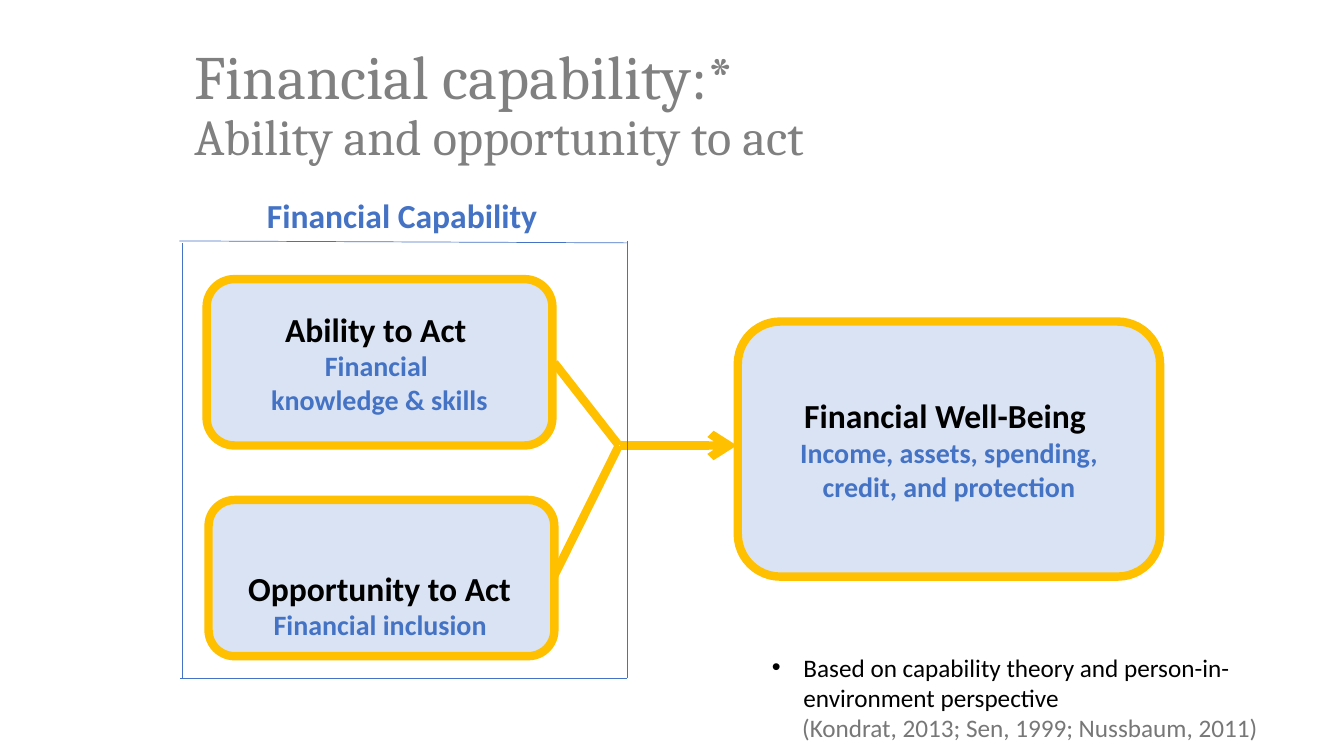
"""Build the financial capability slide."""
from lxml.etree import SubElement
from pptx import Presentation
from pptx.dml.color import RGBColor
from pptx.enum.shapes import MSO_CONNECTOR, MSO_SHAPE
from pptx.enum.text import MSO_ANCHOR, PP_ALIGN
from pptx.oxml.ns import qn
from pptx.util import Pt

GRAY = RGBColor(0x80, 0x80, 0x80)
CITE = RGBColor(0x77, 0x77, 0x77)
BLACK = RGBColor(0, 0, 0)
BLUE = RGBColor(0x44, 0x72, 0xC4)
PALE = RGBColor(0xDA, 0xE3, 0xF3)
GOLD = RGBColor(0xFF, 0xC0, 0x00)


def write(para, text, size=24, color=BLACK, bold=False, font="Calibri", align=None):
    run = para.add_run()
    run.text = text
    run.font.size = Pt(size)
    run.font.name = font
    run.font.bold = bold
    run.font.color.rgb = color
    if align is not None:
        para.alignment = align


def link(x1, y1, x2, y2, color, width):
    line = slide.shapes.add_connector(MSO_CONNECTOR.STRAIGHT, Pt(x1), Pt(y1), Pt(x2), Pt(y2))
    line.line.color.rgb = color
    line.line.width = Pt(width)
    SubElement(line._element.spPr, qn("a:effectLst"))
    return line


deck = Presentation()
deck.slide_width, deck.slide_height = Pt(960), Pt(540)
slide = deck.slides.add_slide(deck.slide_layouts[6])

title = slide.shapes.add_textbox(Pt(131.8), Pt(24.5), Pt(820.8), Pt(103)).text_frame
title.word_wrap = True
title.vertical_anchor = MSO_ANCHOR.MIDDLE
head = title.paragraphs[0]
head.line_spacing = 0.9
write(head, "Financial capability:* ", size=44, color=GRAY, font="Cambria")
head.add_line_break()
write(head, "Ability and opportunity to act", size=36, color=GRAY, font="Cambria")

boxes = [
    (147.6, 199.4, 247, 118.8, ["Ability to Act ", "Financial ", "knowledge & skills"]),
    (149, 357.1, 247, 111.6, []),
    (527, 229.7, 301.7, 182.2,
     ["Financial Well-Being ", "Income, assets, spending, credit, and protection"]),
]
labels = [
    (128.9, 135.4, 316.8, 36, ["Financial Capability"], BLUE),
    (33.8, 401.8, 480.2, 60.5, ["Opportunity to Act ", "Financial inclusion "], BLACK),
]
frames = []
for left, top, width, height, lines in boxes:
    box = slide.shapes.add_shape(
        MSO_SHAPE.ROUNDED_RECTANGLE, Pt(left), Pt(top), Pt(width), Pt(height))
    box.shadow.inherit = False
    box.fill.solid()
    box.fill.fore_color.rgb = PALE
    box.line.color.rgb = GOLD
    box.line.width = Pt(6)
    box.text_frame.vertical_anchor = MSO_ANCHOR.MIDDLE
    frames.append((box.text_frame, lines, BLACK))
for left, top, width, height, lines, color in labels:
    label = slide.shapes.add_textbox(Pt(left), Pt(top), Pt(width), Pt(height))
    frames.append((label.text_frame, lines, color))
for frame, lines, color in frames:
    frame.word_wrap = True
    for i, text in enumerate(lines):
        para = frame.add_paragraph() if i else frame.paragraphs[0]
        write(para, text, size=20 if i else 24, color=BLUE if i else color,
              bold=True, align=PP_ALIGN.CENTER)

for start in (259.2, 411.1):
    link(396, start, 442.1, 318.2, GOLD, 6)
arrow = link(442.8, 318.2, 526.3, 318.2, GOLD, 6)
SubElement(arrow.line._get_or_add_ln(), qn("a:tailEnd"), type="arrow")

edges = [
    (128.2, 172.1, 447.8, 173.5),
    (447.8, 172.1, 447.8, 484.6),
    (447.8, 484.6, 128.9, 484.6),
    (130.3, 173.5, 130.3, 484.6),
]
for edge in edges:
    link(*edge, BLUE, 0.5)

note = slide.shapes.add_textbox(Pt(544.3), Pt(462.2), Pt(389.5), Pt(72.7)).text_frame
note.word_wrap = True
theory, source = note.paragraphs[0], note.add_paragraph()
for para, left, hang in ((theory, 22.5, -22.5), (source, 21.6, 0)):
    props = para._p.get_or_add_pPr()
    props.set("marL", str(Pt(left)))
    props.set("indent", str(Pt(hang)))
props = theory._p.get_or_add_pPr()
SubElement(props, qn("a:buFont"), typeface="Arial")
SubElement(props, qn("a:buChar"), char="•")
write(theory, "Based on capability theory and person-in-environment perspective", size=18)
write(source, "(Kondrat, 2013; Sen, 1999; Nussbaum, 2011)", size=18, color=CITE)

deck.save("out.pptx")
